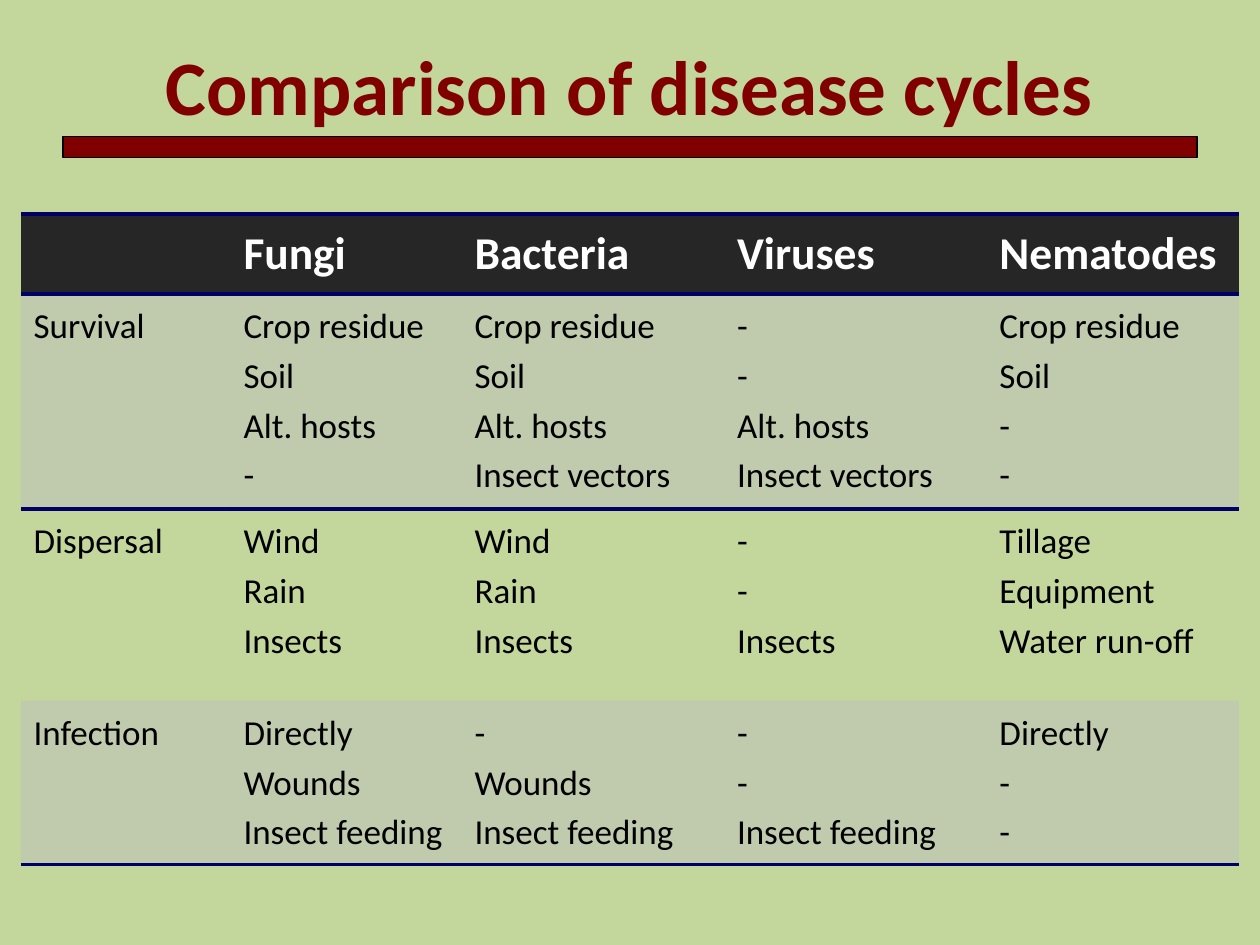
from dataclasses import dataclass

from lxml import etree
from pptx import Presentation
from pptx import util as u
from pptx.dml.color import RGBColor
from pptx.enum import shapes, text
from pptx.oxml.ns import qn

Pt = u.Pt


@dataclass(frozen=True)
class Theme:
    font: str = "Calibri"
    background: str = "C3D69B"
    accent: str = "800000"
    outline: str = "000000"
    header_fill: str = "262626"
    header_text: str = "FFFFFF"
    band: str = "BFBFBF"
    band_opacity: int = 50
    rule: str = "000066"
    rule_width: float = 2.25
    body_text: str = "000000"
    title_size: int = 44
    header_size: int = 26
    body_size: int = 20
    paragraph_gap: int = 20  # percent of the line


THEME = Theme()
NO_TABLE_STYLE = "{2D5ABB26-0587-4C30-8999-92F81FD0307C}"

COLUMN_WIDTHS = [120, 132, 150, 150, 144]
ROW_HEIGHTS = [45.5, 123, 109.5, 93.5]
CELL_INSET_X, CELL_INSET_Y = 7.2, 6.4

# Each line of a cell is one paragraph
ROWS = [
    ["", "Fungi", "Bacteria", "Viruses", "Nematodes"],
    ["Survival", "Crop residue\nSoil\nAlt. hosts\n-",
     "Crop residue\nSoil\nAlt. hosts\nInsect vectors",
     "-\n-\nAlt. hosts\nInsect vectors", "Crop residue\nSoil\n-\n-"],
    ["Dispersal", "Wind\nRain\nInsects", "Wind\nRain\nInsects",
     "-\n-\nInsects", "Tillage\nEquipment\nWater run-off"],
    ["Infection", "Directly\nWounds\nInsect feeding", "-\nWounds\nInsect feeding",
     "-\n-\nInsect feeding", "Directly\n-\n-"],
]


def rgb(value):
    return RGBColor.from_string(value)


def format_runs(paragraph, size, color, bold):
    for run in paragraph.runs:
        run.font.name = THEME.font
        run.font.size = Pt(size)
        run.font.bold = bold
        run.font.color.rgb = rgb(color)


def set_percent_space_before(paragraph, percent):
    properties = paragraph._p.get_or_add_pPr()
    spacing = etree.SubElement(properties, qn("a:spcBef"))
    etree.SubElement(spacing, qn("a:spcPct"), val=str(percent * 1000))


def add_border(cell, side):
    """Draw a rule on one side of a cell: lnT or lnB."""
    properties = cell._tc.get_or_add_tcPr()
    line = etree.SubElement(properties, qn(f"a:{side}"), w=str(Pt(THEME.rule_width)))
    fill = etree.SubElement(line, qn("a:solidFill"))
    etree.SubElement(fill, qn("a:srgbClr"), val=THEME.rule)


def fill_cell(cell, color, opacity=100):
    cell.fill.solid()
    cell.fill.fore_color.rgb = rgb(color)
    if opacity < 100:
        color_element = cell._tc.tcPr.find(qn("a:solidFill")).find(qn("a:srgbClr"))
        etree.SubElement(color_element, qn("a:alpha"), val=str(opacity * 1000))


def place_title(slide, left, top, width, height):
    title = slide.shapes.title
    title.left, title.top, title.width, title.height = map(Pt, (left, top, width, height))
    frame = title.text_frame
    frame.text = "Comparison of disease cycles"
    frame.auto_size = text.MSO_AUTO_SIZE.SHAPE_TO_FIT_TEXT
    frame.paragraphs[0].alignment = text.PP_ALIGN.CENTER
    format_runs(frame.paragraphs[0], THEME.title_size, THEME.accent, True)


def add_title_bar(slide, left, top, width, height):
    bar = slide.shapes.add_shape(shapes.MSO_SHAPE.RECTANGLE,
                                 *map(Pt, (left, top, width, height)))
    bar.shadow.inherit = False
    bar.fill.solid()
    bar.fill.fore_color.rgb = rgb(THEME.accent)
    bar.line.color.rgb = rgb(THEME.outline)
    bar.line.width = Pt(1)


def format_cell(cell, row_index):
    is_header = row_index == 0
    cell.margin_left = cell.margin_right = Pt(CELL_INSET_X)
    cell.margin_top = cell.margin_bottom = Pt(CELL_INSET_Y)
    cell.vertical_anchor = text.MSO_ANCHOR.MIDDLE if is_header else text.MSO_ANCHOR.TOP

    # Rules above and below the header, and under the last row
    if row_index <= 1:
        add_border(cell, "lnT")
    if row_index in (0, len(ROWS) - 1):
        add_border(cell, "lnB")

    # Dark header, then bands on the odd rows
    if is_header:
        fill_cell(cell, THEME.header_fill)
    elif row_index % 2:
        fill_cell(cell, THEME.band, THEME.band_opacity)
    else:
        cell.fill.background()

    size = THEME.header_size if is_header else THEME.body_size
    color = THEME.header_text if is_header else THEME.body_text
    for paragraph in cell.text_frame.paragraphs:
        set_percent_space_before(paragraph, THEME.paragraph_gap)
        format_runs(paragraph, size, color, is_header)


def add_cycle_table(slide, left, top, width, height):
    frame = slide.shapes.add_table(len(ROWS), len(COLUMN_WIDTHS),
                                   *map(Pt, (left, top, width, height)))
    table = frame.table
    table.horz_banding = False
    table._tbl.tblPr.find(qn("a:tableStyleId")).text = NO_TABLE_STYLE
    for column, share in zip(table.columns, COLUMN_WIDTHS):
        column.width = Pt(width * share / sum(COLUMN_WIDTHS))
    for row, share in zip(table.rows, ROW_HEIGHTS):
        row.height = Pt(height * share / sum(ROW_HEIGHTS))
    for row_index, values in enumerate(ROWS):
        for column_index, value in enumerate(values):
            cell = table.cell(row_index, column_index)
            cell.text_frame.text = value
            format_cell(cell, row_index)


def main():
    presentation = Presentation()
    presentation.slide_width, presentation.slide_height = Pt(720), Pt(540)
    slide = presentation.slides.add_slide(presentation.slide_layouts[5])
    slide.background.fill.solid()
    slide.background.fill.fore_color.rgb = rgb(THEME.background)

    place_title(slide, 0, 18, 720, 60.5)
    add_title_bar(slide, 36, 78, 648, 12)
    add_cycle_table(slide, 12, 122.4, sum(COLUMN_WIDTHS), sum(ROW_HEIGHTS))
    presentation.save("out.pptx")


if __name__ == "__main__":
    main()
